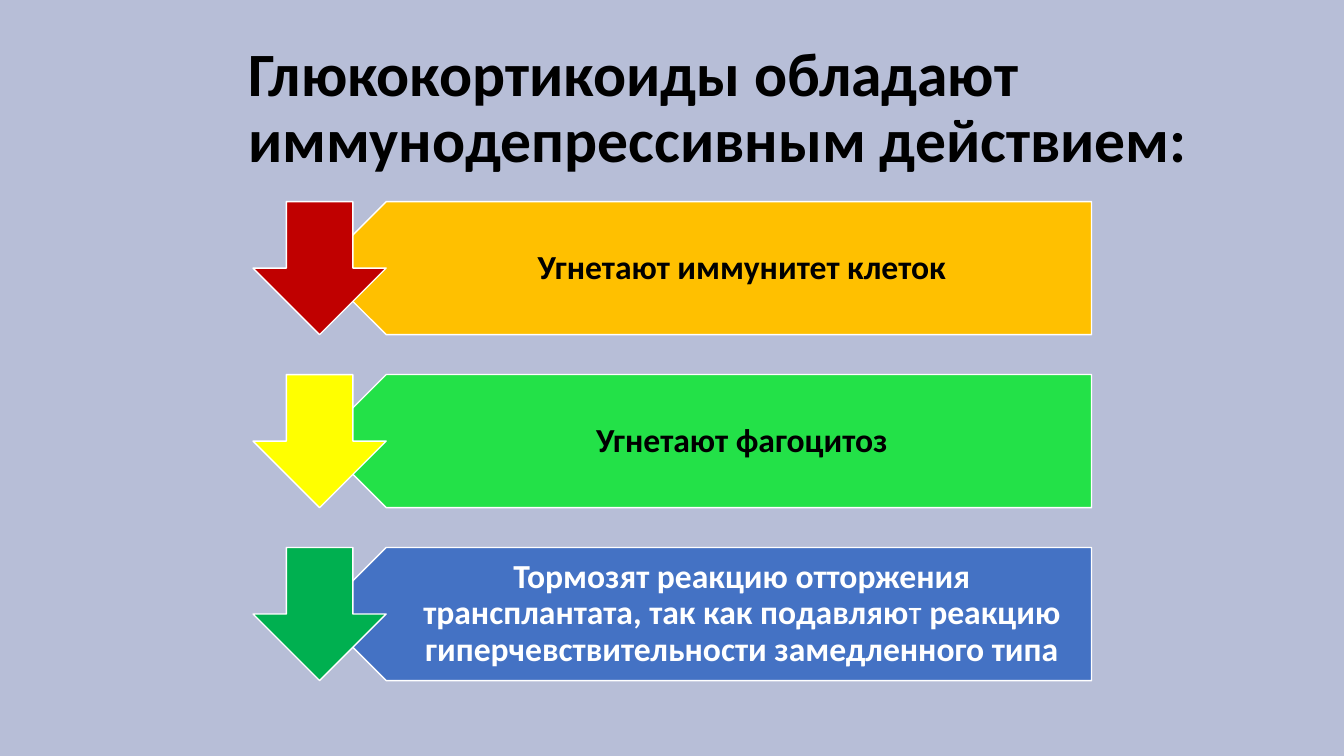
"""Build the slide on the immunosuppressive effects of glucocorticoids."""
from dataclasses import dataclass

import pptx
import pptx.dml.color
import pptx.enum.shapes
import pptx.enum.text
import pptx.util

RGBColor = pptx.dml.color.RGBColor
MSO_SHAPE = pptx.enum.shapes.MSO_SHAPE
PP_ALIGN = pptx.enum.text.PP_ALIGN
Inches = pptx.util.Inches

LAVENDER = RGBColor(0xB7, 0xBE, 0xD7)
BLACK = RGBColor(0x00, 0x00, 0x00)
WHITE = RGBColor(0xFF, 0xFF, 0xFF)
AMBER = RGBColor(0xFF, 0xC0, 0x00)
LIME = RGBColor(0x23, 0xE1, 0x48)
BLUE = RGBColor(0x44, 0x72, 0xC4)
RED = RGBColor(0xC0, 0x00, 0x00)
YELLOW = RGBColor(0xFF, 0xFF, 0x00)
GREEN = RGBColor(0x00, 0xB0, 0x50)

FONT = "Calibri"
UNIT = 1.32
GRID_LEFT = 2.51
GRID_TOP = 2
ROW_PITCH = 1.3
BANNER_COLUMN, BANNER_SPAN = 0.5, 5.8
LABEL_COLUMN, LABEL_SPAN = 0.75, 5.55


@dataclass(frozen=True)
class Phrase:
    """A stretch of text with one weight."""
    text: str
    bold: bool = True


@dataclass(frozen=True)
class Effect:
    """One effect: its wording and the colours of its row."""
    phrases: tuple[Phrase, ...]
    banner_color: RGBColor
    arrow_color: RGBColor
    text_color: RGBColor = BLACK


EFFECTS = (
    Effect((Phrase("Угнетают иммунитет клеток"),), AMBER, RED),
    Effect((Phrase("Угнетают фагоцитоз"),), LIME, YELLOW),
    Effect(
        (
            Phrase("Тормозят реакцию отторжения трансплантата, так как подавляю"),
            Phrase("т ", bold=False),
            Phrase("реакцию гиперчевствительности замедленного типа"),
        ),
        BLUE, GREEN, WHITE,
    ),
)


def cell(column: float, row: int, span: float) -> tuple[int, int, int, int]:
    """Return the left, top, width and height of a grid area."""
    return (
        Inches(GRID_LEFT + column * UNIT),
        Inches(GRID_TOP + row * ROW_PITCH * UNIT),
        Inches(span * UNIT),
        Inches(UNIT),
    )


def style_run(run, size: float, color: RGBColor, bold: bool = True) -> None:
    """Apply the slide's font to a run."""
    run.font.name = FONT
    run.font.size = pptx.util.Pt(size)
    run.font.bold = bold
    run.font.color.rgb = color


def set_frame(frame, alignment: PP_ALIGN) -> None:
    """Wrap and centre a frame vertically, with tight lines."""
    frame.word_wrap = True
    frame.auto_size = pptx.enum.text.MSO_AUTO_SIZE.NONE
    frame.vertical_anchor = pptx.enum.text.MSO_ANCHOR.MIDDLE
    frame.paragraphs[0].alignment = alignment
    frame.paragraphs[0].line_spacing = 0.9


def add_block(slide, kind: MSO_SHAPE, area: tuple[int, int, int, int],
              color: RGBColor, rotation: float = 0) -> None:
    """Add a filled shape with a thin white outline."""
    block = slide.shapes.add_shape(kind, *area)
    block.rotation = rotation
    block.shadow.inherit = False
    block.fill.solid()
    block.fill.fore_color.rgb = color
    block.line.color.rgb = WHITE
    block.line.width = pptx.util.Pt(1)


def add_label(slide, row: int, effect: Effect) -> None:
    """Add the wording of an effect over its banner."""
    frame = slide.shapes.add_textbox(*cell(LABEL_COLUMN, row, LABEL_SPAN)).text_frame
    set_frame(frame, PP_ALIGN.CENTER)
    frame.margin_left, frame.margin_right = Inches(0.58), Inches(0.19)
    frame.margin_top = frame.margin_bottom = Inches(0.1)
    for phrase in effect.phrases:
        run = frame.paragraphs[0].add_run()
        run.text = phrase.text
        style_run(run, 24, effect.text_color, phrase.bold)


def add_effect(slide, row: int, effect: Effect) -> None:
    """Draw the banner, label and arrow of one row."""
    add_block(slide, MSO_SHAPE.PENTAGON, cell(BANNER_COLUMN, row, BANNER_SPAN),
              effect.banner_color, rotation=180)
    add_label(slide, row, effect)
    add_block(slide, MSO_SHAPE.DOWN_ARROW, cell(0, row, 1), effect.arrow_color)


def add_title(slide) -> None:
    """Place and format the slide title."""
    title = slide.shapes.title
    title.left, title.top = Inches(2.36), Inches(0.36)
    title.width, title.height = Inches(11.5), Inches(1.45)
    title.text_frame.text = "Глюкокортикоиды обладают иммунодепрессивным действием:"
    set_frame(title.text_frame, PP_ALIGN.LEFT)
    style_run(title.text_frame.paragraphs[0].runs[0], 44, BLACK)


def main() -> None:
    """Build and save the presentation."""
    deck = pptx.Presentation()
    deck.slide_width, deck.slide_height = Inches(13.33), Inches(7.5)
    slide = deck.slides.add_slide(deck.slide_layouts[5])
    slide.background.fill.solid()
    slide.background.fill.fore_color.rgb = LAVENDER
    add_title(slide)
    for row, effect in enumerate(EFFECTS):
        add_effect(slide, row, effect)
    deck.save("out.pptx")


if __name__ == "__main__":
    main()
